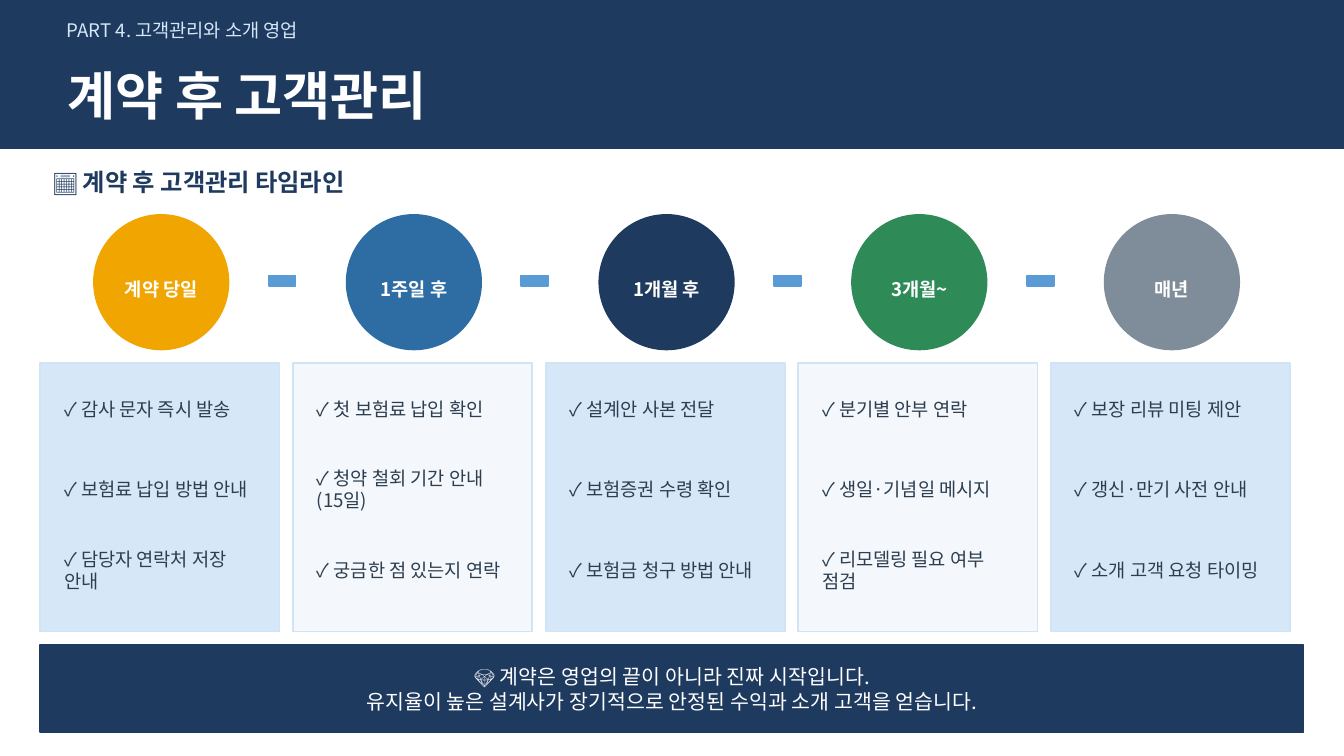
from lxml import etree
from pptx import Presentation
from pptx.dml.color import RGBColor
from pptx.enum.shapes import MSO_SHAPE
from pptx.enum.text import MSO_ANCHOR, MSO_AUTO_SIZE, PP_ALIGN
from pptx.oxml.ns import qn
from pptx.util import Inches, Pt

RECTANGLE, OVAL = MSO_SHAPE.RECTANGLE, MSO_SHAPE.OVAL
LEFT, CENTER = PP_ALIGN.LEFT, PP_ALIGN.CENTER
MIDDLE, NO_AUTOFIT = MSO_ANCHOR.MIDDLE, MSO_AUTO_SIZE.NONE

FONT = "Noto Sans CJK KR"
COLORS = {
    "navy": "1E3A5F", "blue": "2E6DA4", "amber": "F0A500", "green": "2E8B57",
    "gray": "7F8C9A", "dash": "5B9BD5", "pale": "D6E8F8", "mist": "F4F7FB",
    "border": "D0E4F5", "ink": "2C3E50", "white": "FFFFFF",
}

PART = "PART 4. 고객관리와 소개 영업"
TITLE = "계약 후 고객관리"
HEADING = "📅 계약 후 고객관리 타임라인"
STAGES = [
    ("계약 당일", "amber",
     ["감사 문자 즉시 발송", "보험료 납입 방법 안내", "담당자 연락처 저장 안내"]),
    ("1주일 후", "blue",
     ["첫 보험료 납입 확인", "청약 철회 기간 안내(15일)", "궁금한 점 있는지 연락"]),
    ("1개월 후", "navy",
     ["설계안 사본 전달", "보험증권 수령 확인", "보험금 청구 방법 안내"]),
    ("3개월~", "green",
     ["분기별 안부 연락", "생일·기념일 메시지", "리모델링 필요 여부 점검"]),
    ("매년", "gray",
     ["보장 리뷰 미팅 제안", "갱신·만기 사전 안내", "소개 고객 요청 타이밍"]),
]
CLOSING = [
    "💎 계약은 영업의 끝이 아니라 진짜 시작입니다.",
    "유지율이 높은 설계사가 장기적으로 안정된 수익과 소개 고객을 얻습니다.",
]

MARGIN, COLUMN_STEP = 0.3, 1.88
TASK_TOP, TASK_STEP = 2.75, 0.6
CLOSING_BOX = (MARGIN, 4.8, 9.4, 0.65)


def add_block(slide, kind, box, fill, line=None):
    shape = slide.shapes.add_shape(kind, *map(Inches, box))
    shape.shadow.inherit = False
    shape.fill.solid()
    shape.fill.fore_color.rgb = RGBColor.from_string(COLORS[fill])
    shape.line.color.rgb = RGBColor.from_string(COLORS[line or fill])
    shape.line.width = Pt(1)


def write_text(shape, lines, size, color, bold=False, align=LEFT):
    frame = shape.text_frame
    frame_format = {"word_wrap": True, "auto_size": NO_AUTOFIT, "vertical_anchor": MIDDLE}
    for name, value in frame_format.items():
        setattr(frame, name, value)
    for index, line in enumerate(lines):
        paragraph = frame.add_paragraph() if index else frame.paragraphs[0]
        paragraph.alignment = align
        run = paragraph.add_run()
        run.text = line
        for name, value in {"name": FONT, "size": Pt(size), "bold": bold}.items():
            setattr(run.font, name, value)
        run.font.color.rgb = RGBColor.from_string(COLORS[color])
        latin = next(run.font._element.iter(qn("a:latin")))
        east_asian = etree.Element(qn("a:ea"), typeface=FONT)
        latin.addnext(east_asian)


def add_text(slide, box, lines, size, color, bold=False, align=LEFT):
    shape = slide.shapes.add_textbox(*map(Inches, box))
    write_text(shape, lines, size, color, bold, align)


def add_header(slide):
    add_block(slide, RECTANGLE, (0, 0, 10, 1.1), "navy")
    add_text(slide, (0.4, 0.05, 9, 0.35), [PART], 10, "pale")
    title = slide.shapes.title
    title_box = zip(("left", "top", "width", "height"), (0.4, 0.38, 9, 0.65))
    for name, value in title_box:
        setattr(title, name, Inches(value))
    write_text(title, [TITLE], 28, "white", True)
    title.element.getparent().append(title.element)


def add_stage(slide, index, label, color, tasks):
    left = MARGIN + index * COLUMN_STEP
    add_block(slide, OVAL, (left + 0.4, 1.6, 1, 1), color)
    add_text(slide, (left, 1.65, 1.8, 1), [label], 10, "white", True, CENTER)
    if index < len(STAGES) - 1:
        add_block(slide, RECTANGLE, (left + 1.7, 2.05, 0.2, 0.08), "dash")
    card_fill = "mist" if index % 2 else "pale"
    add_block(slide, RECTANGLE, (left, 2.7, 1.78, 2), card_fill, "border")
    for row, task in enumerate(tasks):
        box = (left + 0.08, TASK_TOP + row * TASK_STEP, 1.62, 0.58)
        add_text(slide, box, [f"✓ {task}"], 10, "ink")


def main():
    presentation = Presentation()
    presentation.slide_width = Inches(10)
    presentation.slide_height = presentation.slide_width * 9 // 16
    slide = presentation.slides.add_slide(presentation.slide_layouts[5])
    add_header(slide)
    add_text(slide, (MARGIN, 1.15, 9.4, 0.4), [HEADING], 13, "navy", True)
    for index, stage in enumerate(STAGES):
        add_stage(slide, index, *stage)
    add_block(slide, RECTANGLE, CLOSING_BOX, "navy")
    add_text(slide, CLOSING_BOX, CLOSING, 11, "white", align=CENTER)
    presentation.save("out.pptx")


if __name__ == "__main__":
    main()
